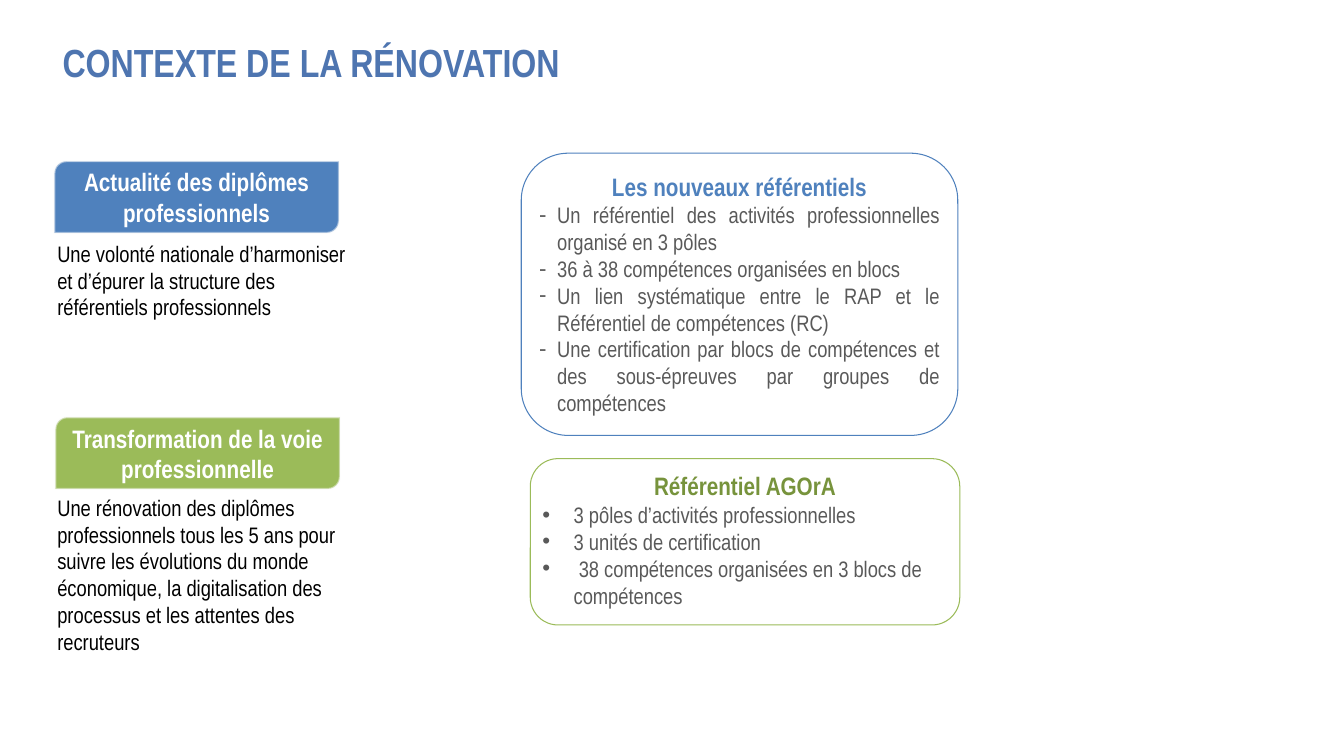
from lxml import etree
from pptx import Presentation
from pptx import util as u
from pptx.dml.color import RGBColor
from pptx.enum import shapes, text
from pptx.oxml.ns import qn

WIDTH, HEIGHT = 13.33, 7.5
FONT = "Arial Narrow"
COLORS = {
    "title": "4E75B0", "blue": "4F81BD", "green": "9BBB59", "dark_green": "77933C",
    "grey": "595959", "black": "000000", "white": "FFFFFF", "edge": "F9F9F9",
}
TITLE = "CONTEXTE DE LA RÉNOVATION"
TITLE_AT = (0.62, 0.38, 9.11, 0.47)

# Each theme: label, label place, colour, explanation, explanation place
THEMES = [
    ("Actualité des diplômes professionnels", (0.54, 1.6, 2.82, 0.71), "blue",
     "Une volonté nationale d’harmoniser et d’épurer la structure des référentiels "
     "professionnels", (0.47, 2.33, 3.13, 1.18)),
    ("Transformation de la voie professionnelle", (0.55, 4.14, 2.82, 0.71), "green",
     "Une rénovation des diplômes professionnels tous les 5 ans pour suivre les évolutions "
     "du monde économique, la digitalisation des processus et les attentes des recruteurs",
     (0.47, 4.85, 3.05, 1.99)),
]
CARDS = [
    {"at": (5.26, 4.55, 4.26, 1.65), "line": "green", "heading_color": "dark_green",
     "bullet": "•", "indent": 0.31, "align": text.PP_ALIGN.LEFT,
     "heading": "Référentiel AGOrA",
     "points": ["3 pôles d’activités professionnelles",
                "3 unités de certification",
                " 38 compétences organisées en 3 blocs de compétences"]},
    {"at": (5.17, 1.52, 4.33, 2.8), "line": "blue", "heading_color": "blue",
     "bullet": "-", "indent": 0.18, "align": text.PP_ALIGN.JUSTIFY,
     "heading": "Les nouveaux référentiels",
     "points": ["Un référentiel des activités professionnelles organisé en 3 pôles",
                "36 à 38 compétences organisées en blocs",
                "Un lien systématique entre le RAP et le Référentiel de compétences (RC)",
                "Une certification par blocs de compétences et des sous-épreuves par "
                "groupes de compétences"]},
]


def rgb(name):
    return RGBColor.from_string(COLORS[name])


def inches(place):
    return [u.Inches(length) for length in place]


def write(paragraph, words, size, color, bold=False, align=text.PP_ALIGN.LEFT):
    paragraph.text = words
    paragraph.alignment = align
    for run in paragraph.runs:
        run.font.name = FONT
        run.font.size = u.Pt(size)
        run.font.bold = bold
        run.font.color.rgb = rgb(color)


def set_margins(frame, margin):
    frame.margin_left = frame.margin_right = u.Inches(margin)
    frame.margin_top = frame.margin_bottom = u.Inches(margin)


def add_bullet(paragraph, mark, indent):
    """Hang the paragraph behind its bullet mark."""
    props = paragraph._p.get_or_add_pPr()
    props.set("marL", str(u.Inches(indent)))
    props.set("indent", str(-u.Inches(indent)))
    etree.SubElement(props, qn("a:buFont")).set("typeface", "Arial")
    etree.SubElement(props, qn("a:buChar")).set("char", mark)


def add_text(slide, place, words, size, color, bold=False):
    frame = slide.shapes.add_textbox(*inches(place)).text_frame
    frame.word_wrap = True
    frame.auto_size = text.MSO_AUTO_SIZE.SHAPE_TO_FIT_TEXT
    write(frame.paragraphs[0], words, size, color, bold)
    return frame


def add_box(slide, preset, place, line, width):
    box = slide.shapes.add_shape(preset, *inches(place))
    box.shadow.inherit = False
    box.line.color.rgb = rgb(line)
    box.line.width = u.Pt(width)
    box.text_frame.word_wrap = True
    return box


def add_label(slide, place, words, color):
    label = add_box(slide, shapes.MSO_SHAPE.ROUND_2_DIAG_RECTANGLE, place, "edge", 1.35)
    label.fill.solid()
    label.fill.fore_color.rgb = rgb(color)
    edge = label.line._ln.find(".//" + qn("a:srgbClr"))
    etree.SubElement(edge, qn("a:alpha")).set("val", "50000")
    label.text_frame.vertical_anchor = text.MSO_ANCHOR.MIDDLE
    write(label.text_frame.paragraphs[0], words, 18, "white", True, text.PP_ALIGN.CENTER)


def add_card(slide, card):
    box = add_box(slide, shapes.MSO_SHAPE.ROUNDED_RECTANGLE, card["at"], card["line"], 0.75)
    box.fill.background()
    frame = box.text_frame
    frame.vertical_anchor = text.MSO_ANCHOR.TOP
    set_margins(frame, 0.04)
    write(frame.paragraphs[0], card["heading"], 18, card["heading_color"], True,
          text.PP_ALIGN.CENTER)
    for point in card["points"]:
        paragraph = frame.add_paragraph()
        add_bullet(paragraph, card["bullet"], card["indent"])
        write(paragraph, point, 16, "grey", align=card["align"])


def main():
    deck = Presentation()
    deck.slide_width, deck.slide_height = inches((WIDTH, HEIGHT))
    slide = deck.slides.add_slide(deck.slide_layouts[6])

    title = add_text(slide, TITLE_AT, TITLE, 28, "title", True)
    title.vertical_anchor = text.MSO_ANCHOR.MIDDLE
    set_margins(title, 0)

    for card in CARDS:
        add_card(slide, card)
    for label, label_at, color, explanation, explanation_at in THEMES:
        add_label(slide, label_at, label, color)
        add_text(slide, explanation_at, explanation, 16, "black")

    deck.save("out.pptx")


if __name__ == "__main__":
    main()
